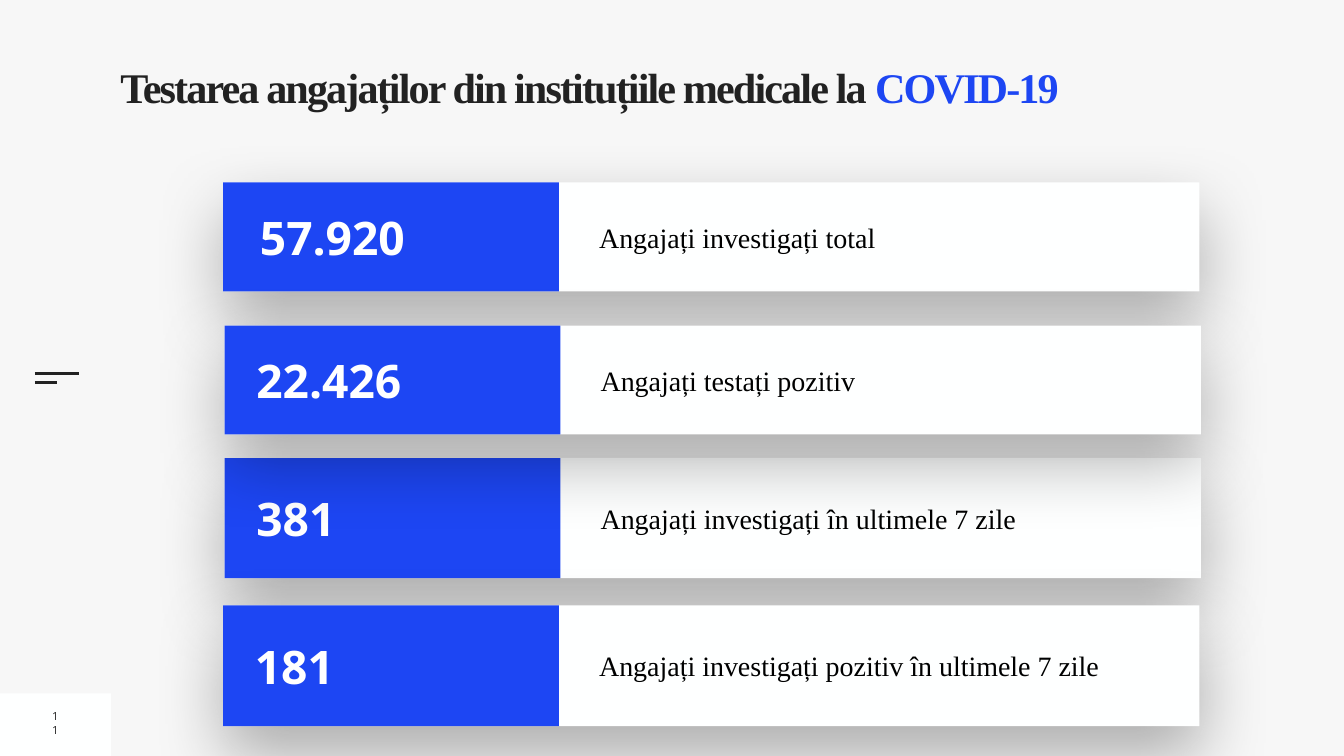
from dataclasses import dataclass

from lxml.etree import SubElement
from pptx import Presentation
from pptx.dml.color import RGBColor
from pptx.enum.shapes import MSO_CONNECTOR, MSO_SHAPE
from pptx.enum.text import MSO_ANCHOR, PP_ALIGN
from pptx.oxml.ns import qn
from pptx.util import Inches, Pt


@dataclass(frozen=True)
class Theme:
    background: str = "F7F7F7"
    card: str = "FEFFFF"
    accent: str = "1D46F3"
    dark: str = "222222"
    black: str = "000000"
    white: str = "FFFFFF"
    serif: str = "Times New Roman"
    sans: str = "Open Sans"
    title_size: float = 60.3
    number_size: float = 66
    label_size: float = 40
    page_size: float = 16


THEME = Theme()

CARD_WIDTH, ACCENT_WIDTH = 19.37, 6.66
LABEL_OFFSET, LABEL_WIDTH, LABEL_HEIGHT = 7.36, 11.76, 0.8
NUMBER_WIDTH, NUMBER_HEIGHT = 6.03, 1.31

# Back to front: left, top, height, number indent, number, label
CARDS = [
    (4.43, 3.62, 2.16, 0.63, "57.920", "Angajați investigați total"),
    (4.46, 9.09, 2.38, 0.53, "381", "Angajați investigați în ultimele 7 zile"),
    (4.43, 12.01, 2.4, 0.53, "181", "Angajați investigați pozitiv în ultimele 7 zile"),
    (4.46, 6.46, 2.16, 0.53, "22.426", "Angajați testați pozitiv"),
]


def style_run(run, font, size, color, bold=False):
    run.font.name = font
    run.font.size = Pt(size)
    run.font.bold = bold
    run.font.color.rgb = RGBColor.from_string(color)


def add_rectangle(shapes, left, top, width, height, color):
    shape = shapes.add_shape(MSO_SHAPE.RECTANGLE, Inches(left), Inches(top),
                             Inches(width), Inches(height))
    shape.shadow.inherit = False
    shape.fill.solid()
    shape.fill.fore_color.rgb = RGBColor.from_string(color)
    shape.line.fill.background()
    return shape


def add_soft_shadow(shape):
    """Cast a wide, 30 % black shadow straight down."""
    effects = shape._element.spPr.find(qn("a:effectLst"))
    shadow = SubElement(effects, qn("a:outerShdw"), blurRad=str(Pt(100)),
                        dist=str(Pt(40)), dir="5400000", algn="t", rotWithShape="0")
    color = SubElement(shadow, qn("a:srgbClr"), val=THEME.black)
    SubElement(color, qn("a:alpha"), val="30000")


def add_text(shapes, left, top, width, height, text, font, size, color,
             bold=False, alignment=PP_ALIGN.LEFT):
    """Add a one-paragraph text box centred vertically."""
    box = shapes.add_textbox(Inches(left), Inches(top), Inches(width), Inches(height))
    frame = box.text_frame
    frame.word_wrap = True
    frame.vertical_anchor = MSO_ANCHOR.MIDDLE
    frame.margin_left = frame.margin_right = Inches(0.1)
    frame.margin_top = frame.margin_bottom = Inches(0.1)
    frame.text = text
    paragraph = frame.paragraphs[0]
    paragraph.alignment = alignment
    style_run(paragraph.runs[0], font, size, color, bold)


def add_rule(slide, left, top, length):
    line = slide.shapes.add_connector(MSO_CONNECTOR.STRAIGHT, Inches(left), Inches(top),
                                      Inches(left + length), Inches(top))
    line.line.color.rgb = RGBColor.from_string(THEME.dark)
    line.line.width = Pt(3)
    SubElement(line._element.spPr, qn("a:effectLst"))


def add_title(slide):
    box = slide.shapes.add_textbox(Inches(2.39), Inches(1.42), Inches(23), Inches(1.58))
    frame = box.text_frame
    frame.word_wrap = True
    frame.margin_left = frame.margin_right = 0
    frame.margin_top = frame.margin_bottom = 0
    paragraph = frame.paragraphs[0]
    paragraph.line_spacing = 0.8
    for text, color in (
        ("Testarea angajaților din instituțiile medicale la ", THEME.dark),
        ("COVID-19", THEME.accent),
    ):
        run = paragraph.add_run()
        run.text = text
        style_run(run, THEME.serif, THEME.title_size, color, bold=True)
        run.font._element.set("spc", "-270")


def add_card(slide, left, top, height, indent, number, label):
    shapes = slide.shapes.add_group_shape().shapes
    middle = top + height / 2
    add_soft_shadow(add_rectangle(shapes, left, top, CARD_WIDTH, height, THEME.card))
    add_text(shapes, left + LABEL_OFFSET, middle - LABEL_HEIGHT / 2, LABEL_WIDTH,
             LABEL_HEIGHT, label, THEME.serif, THEME.label_size, THEME.black)
    add_rectangle(shapes, left, top, ACCENT_WIDTH, height, THEME.accent)
    add_text(shapes, left + indent, middle - NUMBER_HEIGHT / 2, NUMBER_WIDTH,
             NUMBER_HEIGHT, number, THEME.sans, THEME.number_size, THEME.white, bold=True)


def main():
    presentation = Presentation()
    presentation.slide_width = Inches(26.67)
    presentation.slide_height = Inches(15)
    slide = presentation.slides.add_slide(presentation.slide_layouts[6])
    slide.background.fill.solid()
    slide.background.fill.fore_color.rgb = RGBColor.from_string(THEME.background)

    add_rectangle(slide.shapes, 0, 13.76, 2.2, 1.24, THEME.card)
    add_rule(slide, 0.69, 7.41, 0.88)
    add_rule(slide, 0.69, 7.59, 0.44)
    add_title(slide)
    add_text(slide.shapes, 0.93, 14.09, 0.34, 0.51, "11", THEME.sans,
             THEME.page_size, THEME.dark, alignment=PP_ALIGN.CENTER)
    for card in CARDS:
        add_card(slide, *card)

    presentation.save("out.pptx")


if __name__ == "__main__":
    main()
